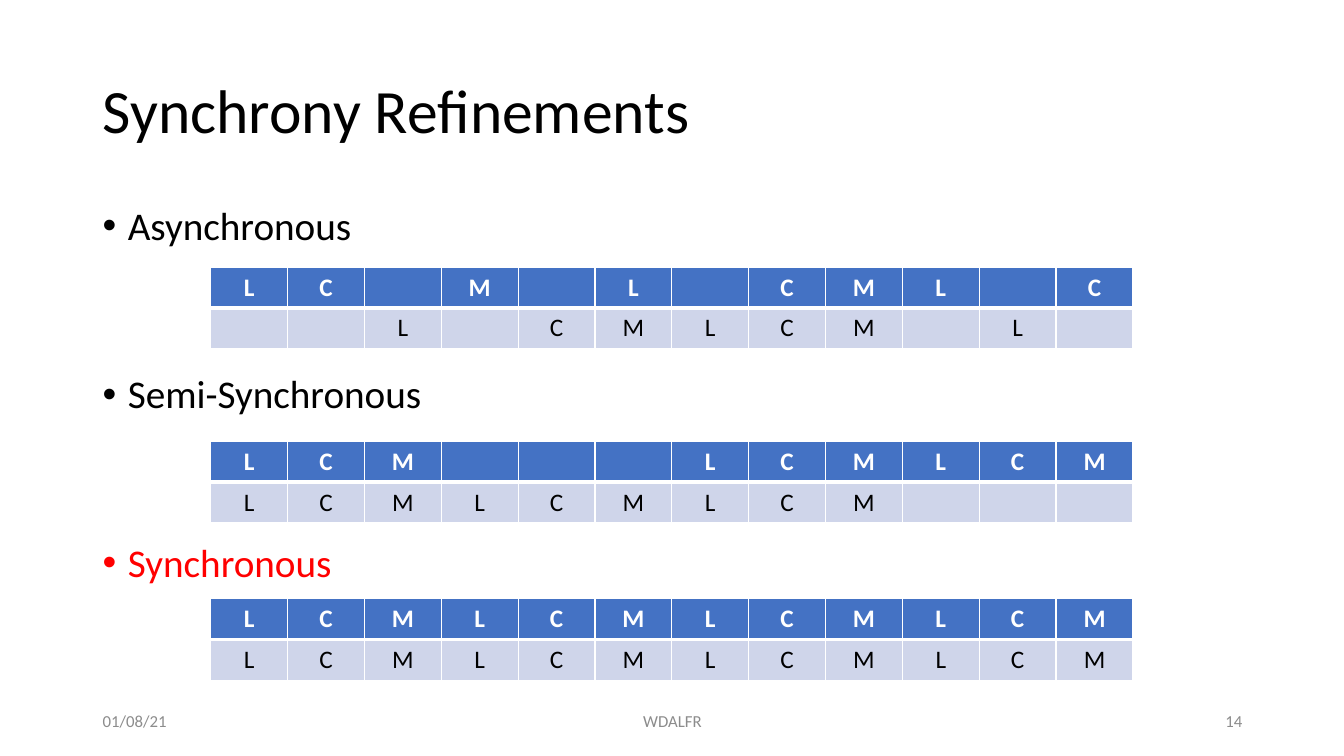
from lxml import etree
from pptx import Presentation
from pptx.dml import color
from pptx.enum import text
from pptx.oxml import ns
from pptx.util import Inches, Pt

LEFT, MID, RIGHT = text.PP_ALIGN.LEFT, text.PP_ALIGN.CENTER, text.PP_ALIGN.RIGHT


def paint(target, code):
    target.rgb = color.RGBColor.from_string(code)


def write(para, words, size=18, tint="000000", bold=False, align=LEFT):
    para.alignment = align
    run = para.add_run()
    run.text = words
    font = run.font
    font.name, font.size, font.bold = "Calibri", Pt(size), bold
    font.fill.solid()
    paint(font.fill.fore_color, tint)


def frame(slide, left, top, width, height, anchor=text.MSO_ANCHOR.MIDDLE):
    box = slide.shapes.add_textbox(*map(Inches, (left, top, width, height)))
    body = box.text_frame
    body.word_wrap = True
    body.vertical_anchor = anchor
    return body


def bullet(para):
    props = para._p.get_or_add_pPr()
    props.set("marL", str(Inches(0.25)))
    props.set("indent", str(-Inches(0.25)))
    etree.SubElement(props, ns.qn("a:buFont")).set("typeface", "Arial")
    etree.SubElement(props, ns.qn("a:buChar")).set("char", "•")


def edge(cell, side, width):
    line = etree.SubElement(cell._tc.get_or_add_tcPr(), ns.qn("a:ln" + side))
    line.set("w", str(Pt(width)))
    fill = etree.SubElement(line, ns.qn("a:solidFill"))
    etree.SubElement(fill, ns.qn("a:srgbClr")).set("val", "FFFFFF")


def grid(slide, top, rows):
    place = map(Inches, (2.09, top, 9.15, 0.81))
    table = slide.shapes.add_table(len(rows), len(rows[0]), *place).table
    for row, steps in enumerate(rows):
        head = row == 0
        for col, step in enumerate(steps):
            cell = table.cell(row, col)
            for side in "LRTB":
                edge(cell, side, 3 if side == "TB"[head] else 1)
            cell.fill.solid()
            paint(cell.fill.fore_color, "4472C4" if head else "CFD5EA")
            if step != " ":
                tint = "FFFFFF" if head else "000000"
                write(cell.text_frame.paragraphs[0], step, tint=tint, bold=head, align=MID)


def main():
    deck = Presentation()
    deck.slide_width, deck.slide_height = Inches(13.33), Inches(7.5)
    slide = deck.slides.add_slide(deck.slide_layouts[6])

    title = frame(slide, 0.92, 0.4, 11.5, 1.45).paragraphs[0]
    title.line_spacing = 0.9
    write(title, "Synchrony Refinements", size=44)

    models = [
        ("Asynchronous", "000000", 2.65, ("LC M L CML C", "  L CMLCM L ")),
        ("Semi-Synchronous", "000000", 4.38, ("LCM   LCMLCM", "LCMLCMLCM   ")),
        ("Synchronous", "FF0000", 5.94, ("LCM" * 4, "LCM" * 4)),
    ]
    body = frame(slide, 0.92, 2, 11.5, 4.76, anchor=text.MSO_ANCHOR.TOP)
    for rank, (name, tint, top, rows) in enumerate(models):
        para = body.add_paragraph() if rank else body.paragraphs[0]
        para.line_spacing = 0.9
        para.space_before = Pt(90 if rank else 0)
        bullet(para)
        write(para, name, size=28, tint=tint)
        grid(slide, top, rows)

    for left, width, words, align in [
        (0.92, 3, "01/08/21", LEFT),
        (4.42, 4.5, "WDALFR", MID),
        (9.42, 3, "14", RIGHT),
    ]:
        foot = frame(slide, left, 6.95, width, 0.4).paragraphs[0]
        write(foot, words, size=12, tint="8C8C8C", align=align)

    deck.save("out.pptx")


if __name__ == "__main__":
    main()
